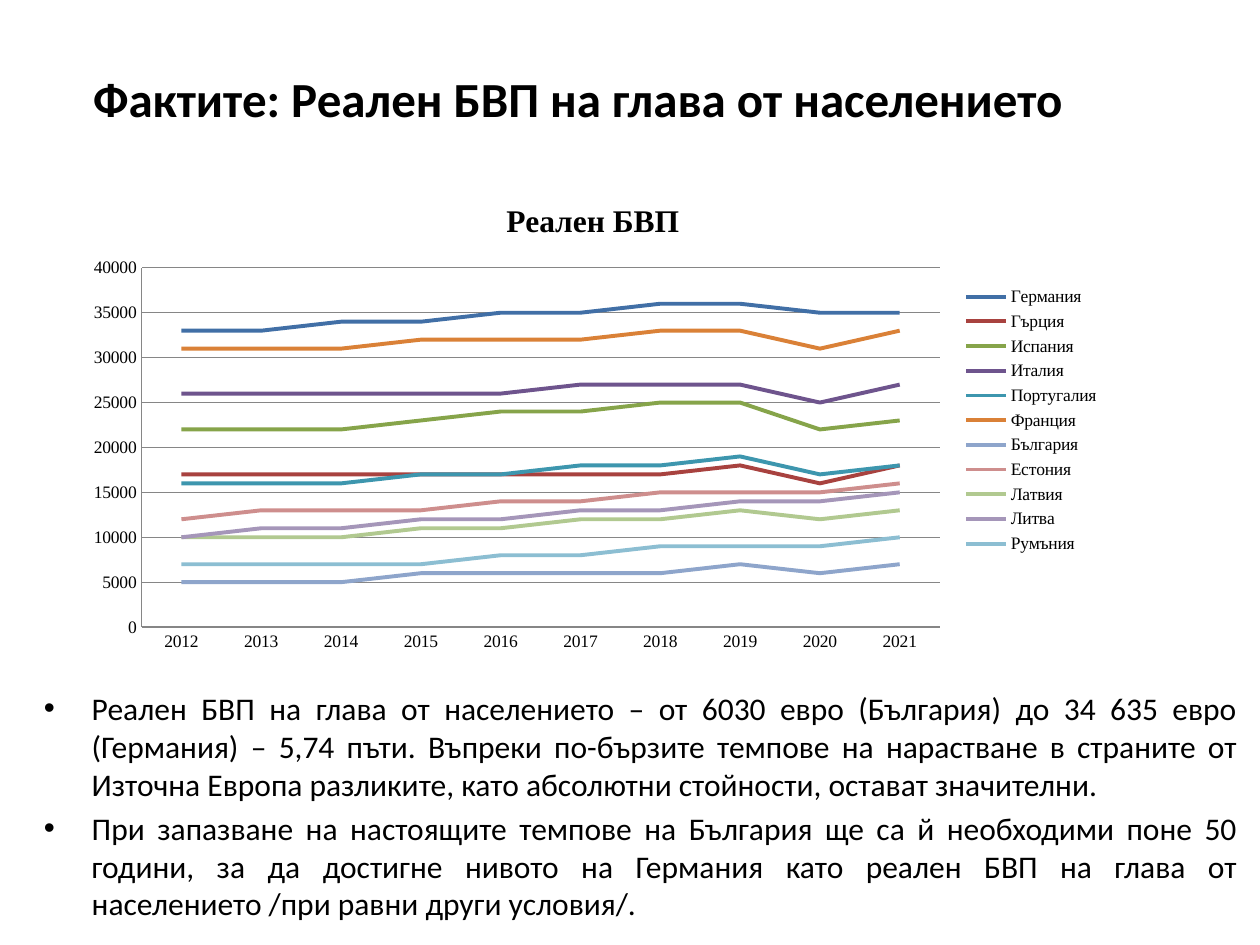
from lxml import etree
from pptx import Presentation
from pptx.chart.data import CategoryChartData
from pptx.dml.color import RGBColor
from pptx.enum.chart import XL_CHART_TYPE, XL_LEGEND_POSITION, XL_MARKER_STYLE, XL_TICK_MARK
from pptx.enum.text import MSO_ANCHOR, PP_ALIGN
from pptx.oxml.ns import qn
from pptx.util import Inches, Pt

LINE = XL_CHART_TYPE.LINE
RIGHT = XL_LEGEND_POSITION.RIGHT
PLAIN = XL_MARKER_STYLE.NONE
NO_TICK = XL_TICK_MARK.NONE
MIDDLE, TOP = MSO_ANCHOR.MIDDLE, MSO_ANCHOR.TOP
CENTER, JUSTIFY = PP_ALIGN.CENTER, PP_ALIGN.JUSTIFY
SANS, SERIF = "Calibri", "Times New Roman"
BLACK, GRAY = "000000", "868686"

YEARS = [str(year) for year in range(2012, 2022)]
STATES = [
    ("Германия", "416FA6", [33000, 33000, 34000, 34000, 35000, 35000, 36000, 36000, 35000, 35000]),
    ("Гърция", "A8423F", [17000, 17000, 17000, 17000, 17000, 17000, 17000, 18000, 16000, 18000]),
    ("Испания", "86A44A", [22000, 22000, 22000, 23000, 24000, 24000, 25000, 25000, 22000, 23000]),
    ("Италия", "6E548D", [26000, 26000, 26000, 26000, 26000, 27000, 27000, 27000, 25000, 27000]),
    ("Португалия", "3D96AE", [16000, 16000, 16000, 17000, 17000, 18000, 18000, 19000, 17000, 18000]),
    ("Франция", "DA8137", [31000, 31000, 31000, 32000, 32000, 32000, 33000, 33000, 31000, 33000]),
    ("България", "8EA5CB", [5000, 5000, 5000, 6000, 6000, 6000, 6000, 7000, 6000, 7000]),
    ("Естония", "CE8E8D", [12000, 13000, 13000, 13000, 14000, 14000, 15000, 15000, 15000, 16000]),
    ("Латвия", "B1C990", [10000, 10000, 10000, 11000, 11000, 12000, 12000, 13000, 12000, 13000]),
    ("Литва", "A596B9", [10000, 11000, 11000, 12000, 12000, 13000, 13000, 14000, 14000, 15000]),
    ("Румъния", "8CBED2", [7000, 7000, 7000, 7000, 8000, 8000, 9000, 9000, 9000, 10000]),
]
HEAD = "Фактите: Реален БВП на глава от населението"
POINTS = [
    "Реален БВП на глава от населението – от 6030 евро (България) до 34 635 евро "
    "(Германия) – 5,74 пъти. Въпреки по-бързите темпове на нарастване в страните от "
    "Източна Европа разликите, като абсолютни стойности, остават значителни.",
    "При запазване на настоящите темпове на България ще са й необходими поне 50 "
    "години, за да достигне нивото на Германия като реален БВП на глава от "
    "населението /при равни други условия/.",
]


def paint(target, color):
    target.rgb = RGBColor.from_string(color)


def style(font, name, size, bold=False):
    font.name = name
    font.size = Pt(size)
    font.bold = bold
    paint(font.color, BLACK)


def stroke(line, color, width):
    paint(line.color, color)
    line.width = Pt(width)


def add_text(slide, box, lines, size, align, anchor=TOP, bold=False):
    frame = slide.shapes.add_textbox(*map(Inches, box)).text_frame
    frame.word_wrap = True
    frame.vertical_anchor = anchor
    frame.text = "\n".join(lines)
    for par in frame.paragraphs:
        par.alignment = align
        style(par.font, SANS, size, bold)
    return frame


def add_bullets(frame):
    for par in frame.paragraphs:
        par.space_before = Pt(3.6)
        props = par._p.get_or_add_pPr()
        props.set("marL", str(Inches(0.38)))
        props.set("indent", str(-Inches(0.38)))
        face = etree.SubElement(props, qn("a:buFont"))
        face.set("typeface", "Arial")
        mark = etree.SubElement(props, qn("a:buChar"))
        mark.set("char", "•")
        props.append(props.find(qn("a:defRPr")))


def style_axis(axis):
    axis.major_tick_mark = axis.minor_tick_mark = NO_TICK
    style(axis.tick_labels.font, SERIF, 10)
    stroke(axis.format.line, GRAY, 0.75)


def add_graph(slide, box):
    data = CategoryChartData()
    data.categories = YEARS
    for name, _, values in STATES:
        data.add_series(name, values)
    chart = slide.shapes.add_chart(LINE, *map(Inches, box), data).chart
    style(chart.font, SANS, 10)
    for series, (_, color, _) in zip(chart.plots[0].series, STATES):
        series.smooth = False
        series.marker.style = PLAIN
        stroke(series.format.line, color, 2.25)

    title = chart.chart_title.text_frame
    title.text = "Реален БВП"
    style(title.paragraphs[0].font, SERIF, 18, True)
    chart.chart_title.include_in_layout = False

    scale = chart.value_axis
    for axis in (chart.category_axis, scale):
        style_axis(axis)
    scale.minimum_scale, scale.maximum_scale, scale.major_unit = 0, 40000, 5000
    stroke(scale.major_gridlines.format.line, GRAY, 0.75)

    chart.has_legend = True
    legend = chart.legend
    legend.position = RIGHT
    legend.include_in_layout = False
    style(legend.font, SERIF, 10)


def main():
    deck = Presentation()
    deck.slide_width, deck.slide_height = Inches(10), Inches(7.5)
    slide = deck.slides.add_slide(deck.slide_layouts[6])
    add_text(slide, (0.5, 0.3, 8.17, 0.95), [HEAD], 28, CENTER, MIDDLE, True)
    add_graph(slide, (0.58, 1.42, 8.25, 3.83))
    add_bullets(add_text(slide, (0.25, 5.42, 9.67, 1.92), POINTS, 18, JUSTIFY))
    deck.save("out.pptx")


if __name__ == "__main__":
    main()
